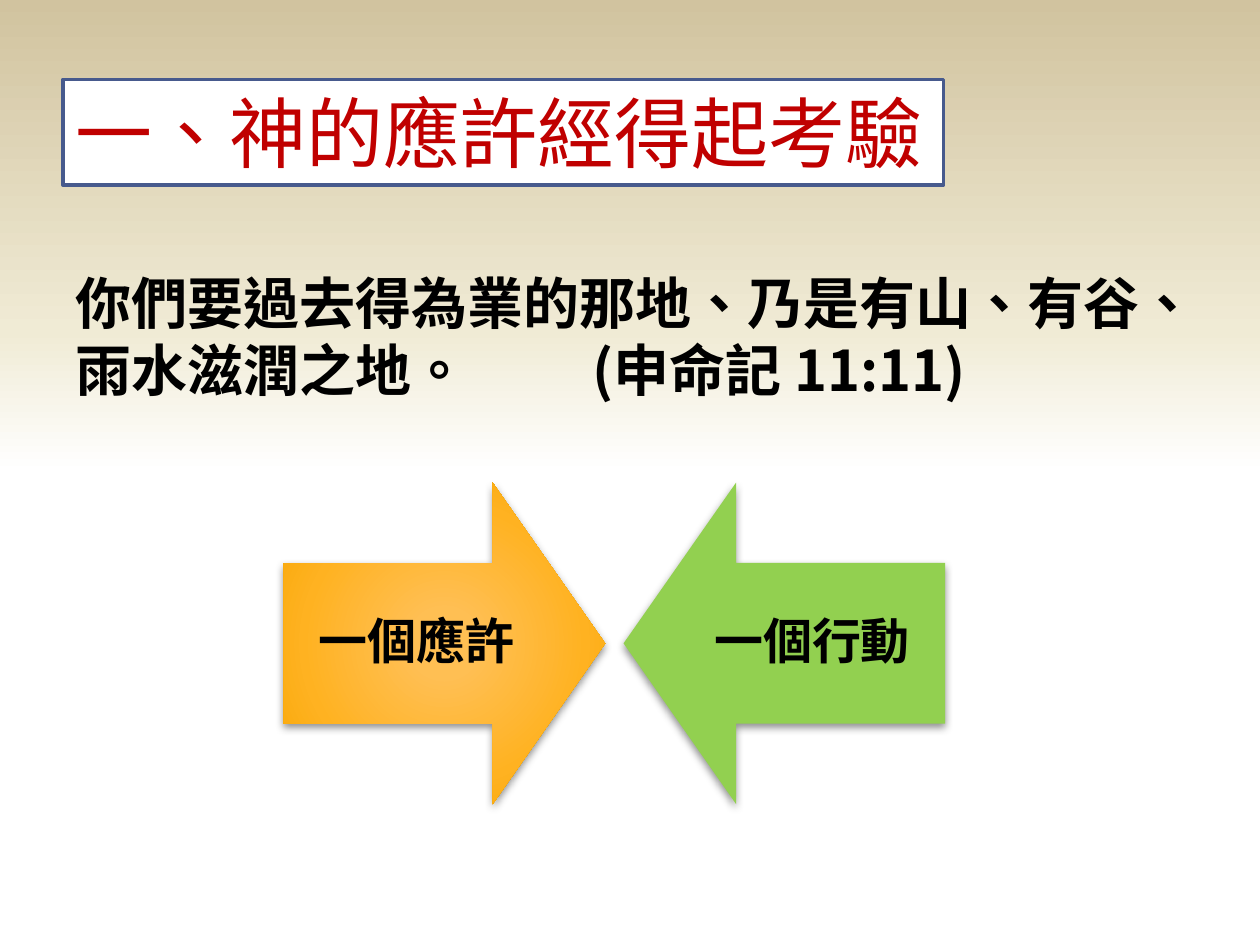
from lxml.etree import SubElement
from pptx import Presentation
from pptx.dml.color import RGBColor
from pptx.enum.shapes import MSO_SHAPE
from pptx.enum.text import MSO_ANCHOR, MSO_AUTO_SIZE, PP_ALIGN
from pptx.oxml.ns import qn
from pptx.util import Cm, Pt

WHITE = RGBColor(0xFF, 0xFF, 0xFF)
BLACK = RGBColor(0x00, 0x00, 0x00)
RED = RGBColor(0xC0, 0x00, 0x00)
NAVY = RGBColor(0x47, 0x5A, 0x8D)
GREEN = RGBColor(0x92, 0xD0, 0x50)
SKY = [(50, WHITE), (65, RGBColor(0xF0, 0xEB, 0xD5)), (100, RGBColor(0xD1, 0xC3, 0x9F))]
ORANGE = [
    (0, RGBColor(0xFF, 0xBF, 0x54)),
    (15, RGBColor(0xFF, 0xBF, 0x53)),
    (62, RGBColor(0xFF, 0xB2, 0x21)),
    (97, RGBColor(0xF6, 0xA5, 0x00)),
    (100, RGBColor(0xD6, 0x99, 0x00)),
]


class PromiseSlide:
    CJK_FONT = "Noto Sans CJK SC"

    def __init__(self, slide):
        self.slide = slide

    def gradient(self, fill, owner, stops, radial=False):
        fill.gradient()
        grad = owner.find(".//" + qn("a:gradFill"))
        for child in list(grad):
            grad.remove(child)
        stop_list = SubElement(grad, qn("a:gsLst"))
        for percent, color in stops:
            stop = SubElement(stop_list, qn("a:gs"), pos=str(percent * 1000))
            SubElement(stop, qn("a:srgbClr"), val=str(color))
        if radial:
            circle = SubElement(grad, qn("a:path"), path="circle")
            SubElement(circle, qn("a:fillToRect"), l="50000", t="50000", r="50000", b="50000")
        else:
            SubElement(grad, qn("a:lin"), ang="16200000", scaled="0")

    def background(self, stops):
        self.gradient(self.slide.background.fill, self.slide.element, stops)

    def set_text(self, frame, text, font, size, color, bold=False, align=PP_ALIGN.LEFT):
        frame.text = text
        paragraph = frame.paragraphs[0]
        paragraph.alignment = align
        for run in paragraph.runs:
            run.font.name = font
            run.font.size = Pt(size)
            run.font.bold = bold
            run.font.color.rgb = color
            # East Asian font and language
            properties = run._r.get_or_add_rPr()
            properties.set("lang", "zh-TW")
            east_asian = properties.makeelement(qn("a:ea"), {"typeface": self.CJK_FONT})
            properties.find(qn("a:latin")).addnext(east_asian)
        return paragraph

    def heading(self, text, left, top, width, height):
        banner = self.slide.shapes.add_shape(MSO_SHAPE.RECTANGLE, left, top, width, height)
        banner.shadow.inherit = False
        banner.fill.solid()
        banner.fill.fore_color.rgb = WHITE
        banner.line.color.rgb = NAVY
        banner.line.width = Pt(2)
        frame = banner.text_frame
        frame.word_wrap = False
        frame.auto_size = MSO_AUTO_SIZE.SHAPE_TO_FIT_TEXT
        frame.vertical_anchor = MSO_ANCHOR.MIDDLE
        self.set_text(frame, text, "Lato", 44, RED)

    def verse(self, text, left, top, width, height):
        frame = self.slide.shapes.add_textbox(left, top, width, height).text_frame
        frame.word_wrap = True
        frame.auto_size = MSO_AUTO_SIZE.SHAPE_TO_FIT_TEXT
        self.set_text(frame, text, self.CJK_FONT, 32, BLACK, bold=True)

    def arrow(self, group, left, top, size, rotation, color):
        arrow = group.shapes.add_shape(MSO_SHAPE.DOWN_ARROW, left, top, size, size)
        arrow.rotation = rotation
        arrow.adjustments[0] = 0.5
        arrow.adjustments[1] = 0.35
        arrow.line.fill.background()
        if isinstance(color, list):
            self.gradient(arrow.fill, arrow.element, color, radial=True)
        else:
            arrow.fill.solid()
            arrow.fill.fore_color.rgb = color
        # Soft shadow straight below
        arrow.shadow.inherit = False
        effects = arrow.element.spPr.find(qn("a:effectLst"))
        shadow = SubElement(effects, qn("a:outerShdw"), blurRad=str(Pt(5)), dist=str(Pt(2)),
                            dir="5400000", rotWithShape="0")
        shade = SubElement(shadow, qn("a:srgbClr"), val=str(BLACK))
        SubElement(shade, qn("a:alpha"), val="43000")

    def label(self, group, text, left, top, width, height):
        frame = group.shapes.add_textbox(left, top, width, height).text_frame
        frame.word_wrap = True
        frame.vertical_anchor = MSO_ANCHOR.MIDDLE
        frame.margin_left = frame.margin_right = Cm(0.56)
        frame.margin_top = frame.margin_bottom = Cm(0.56)
        paragraph = self.set_text(frame, text, "Cabin", 28, BLACK, bold=True,
                                  align=PP_ALIGN.CENTER)
        paragraph.line_spacing = 0.9


def main():
    presentation = Presentation()
    presentation.slide_width = Cm(25.4)
    presentation.slide_height = Cm(19.05)
    page = PromiseSlide(presentation.slides.add_slide(presentation.slide_layouts[6]))
    page.background(SKY)

    # Heading and verse
    page.heading("一、神的應許經得起考驗", Cm(1.27), Cm(1.6), Cm(17.75), Cm(2.13))
    page.verse("你們要過去得為業的那地、乃是有山、有谷、雨水滋潤之地。\t\t (申命記 11:11)",
               Cm(1.27), Cm(5.28), Cm(22.86), Cm(3))

    # Two arrows that meet, each label towards the outer edge
    arrow_size, label_width = Cm(6.48), Cm(5.36)
    inset = arrow_size - label_width
    meeting = page.slide.shapes.add_group_shape()
    for text, left, rotation, color, shift in (
        ("一個應許", Cm(5.72), 270, ORANGE, 0),
        ("一個行動", Cm(12.57), 90, GREEN, inset),
    ):
        page.arrow(meeting, left, Cm(9.73), arrow_size, rotation, color)
        page.label(meeting, text, left + shift, Cm(11.35), label_width, Cm(3.25))

    presentation.save("out.pptx")


if __name__ == "__main__":
    main()
